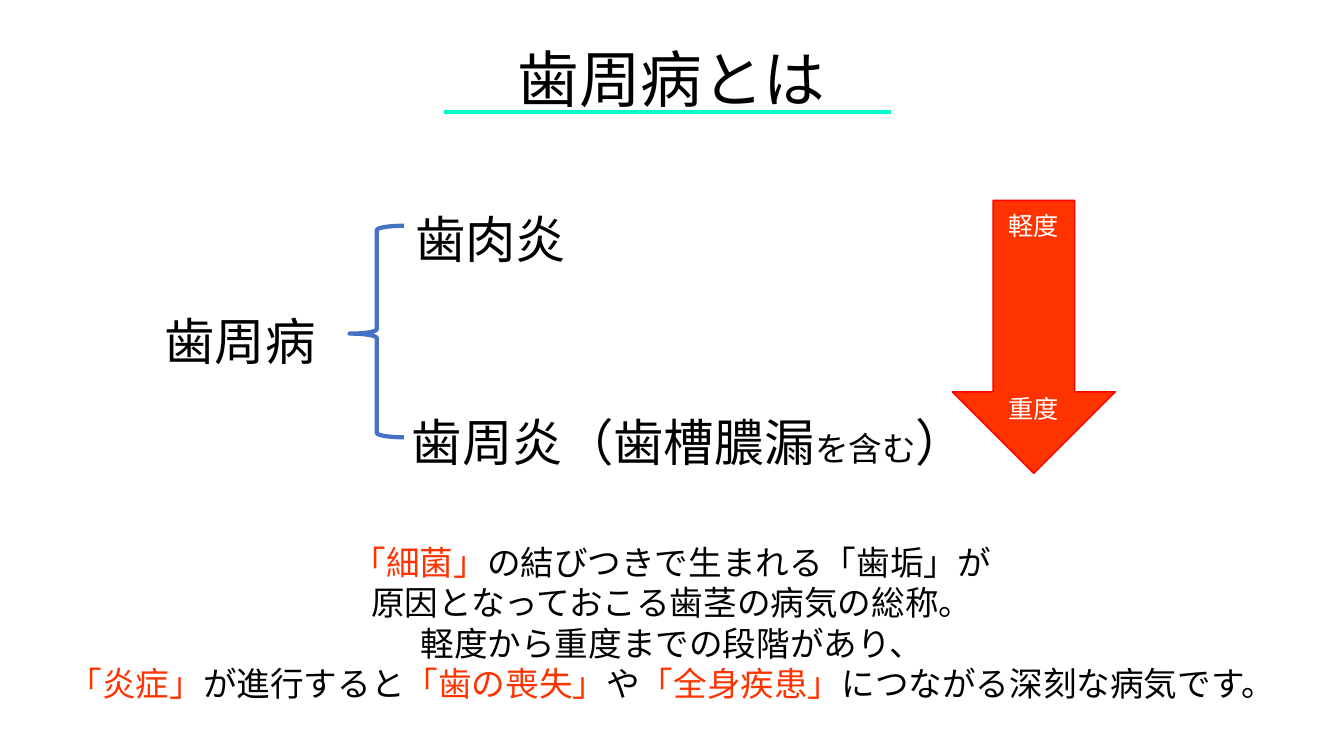
from lxml import etree
from pptx import Presentation
from pptx.dml.color import RGBColor
from pptx.enum.shapes import MSO_CONNECTOR, MSO_SHAPE
from pptx.enum.text import MSO_ANCHOR, PP_ALIGN
from pptx.oxml.ns import qn
from pptx.util import Cm, Pt

FONT = "Noto Sans CJK JP"
BLACK, WHITE, RED = "000000", "FFFFFF", "FF3300"


def rgb(value):
    return RGBColor.from_string(value)


def write(tf, lines, pitch, align=PP_ALIGN.LEFT, gap=0):
    """Fill a frame; each line is a list of (text, size, colour) runs."""
    tf.word_wrap = True
    for i, runs in enumerate(lines):
        p = tf.add_paragraph() if i else tf.paragraphs[0]
        p.alignment = align
        p.line_spacing = Pt(pitch)
        p.space_before = Pt(gap if i else 0)
        for text, size, colour in runs:
            r = p.add_run()
            r.text = text
            for name, value in {"name": FONT, "size": Pt(size)}.items():
                setattr(r.font, name, value)
            r.font.color.rgb = rgb(colour)
            ea = etree.SubElement(r.font._element, qn("a:ea"))
            ea.set("typeface", FONT)


prs = Presentation()
prs.slide_width, prs.slide_height = Cm(33.87), Cm(19.05)
s = prs.slides.add_slide(prs.slide_layouts[6])

# Title, labels and explanation
title = [[("歯周病とは", 44, BLACK)]]
disease = [[("歯周病", 36, BLACK)]]
gingivitis = [[("歯肉炎", 36, BLACK)]]
periodontitis = [[("歯周炎（歯槽膿漏", 36, BLACK), ("を含む", 24, BLACK), ("）", 36, BLACK)]]
explanation = [
    [("「細菌」", 24, RED), ("の結びつきで生まれる「歯垢」が", 24, BLACK)],
    [("原因となっておこる歯茎の病気の総称。", 24, BLACK)],
    [("軽度から重度までの段階があり、", 24, BLACK)],
    [("「炎症」", 24, RED), ("が進行すると", 24, BLACK), ("「歯の喪失」", 24, RED),
     ("や", 24, BLACK), ("「全身疾患」", 24, RED), ("につながる深刻な病気です。", 24, BLACK)],
]
for lines, box, pitch, align in [
    (title, (1.78, 0.94, 30.3, 1.78), 52, PP_ALIGN.CENTER),
    (disease, (3.89, 7.65, 4.37, 1.8), 44, PP_ALIGN.LEFT),
    (gingivitis, (10.21, 5.1, 4.37, 1.8), 44, PP_ALIGN.LEFT),
    (periodontitis, (10.13, 10.2, 15.47, 1.8), 44, PP_ALIGN.LEFT),
    (explanation, (1.37, 13.52, 31.12, 4.37), 28.9, PP_ALIGN.CENTER),
]:
    tb = s.shapes.add_textbox(*map(Cm, box))
    write(tb.text_frame, lines, pitch, align)

# Title underline
underline = s.shapes.add_connector(
    MSO_CONNECTOR.STRAIGHT, Cm(11.18), Cm(2.82), Cm(22.45), Cm(2.82))
underline.line.color.rgb = rgb("00FFCC")
underline.line.width = Pt(3)
etree.SubElement(underline._element.spPr, qn("a:effectLst"))

# Brace joining the two types
brace = s.shapes.add_shape(MSO_SHAPE.LEFT_BRACE, Cm(8.81), Cm(5.69), Cm(1.37), Cm(5.33))
brace.adjustments[0], brace.adjustments[1] = 0.08, 0.51
brace.shadow.inherit = False
brace.fill.background()
brace.line.color.rgb = rgb("4472C4")
brace.line.width = Pt(3)

# Severity arrow
arrow = s.shapes.add_shape(MSO_SHAPE.DOWN_ARROW, Cm(24), Cm(5.05), Cm(4.11), Cm(6.88))
arrow.shadow.inherit = False
arrow.fill.solid()
arrow.fill.fore_color.rgb = rgb(RED)
arrow.line.color.rgb = rgb("FF0000")
arrow.line.width = Pt(1)
arrow.text_frame.vertical_anchor = MSO_ANCHOR.MIDDLE
write(arrow.text_frame, [[("軽度", 18, WHITE)], [("重度", 18, WHITE)]],
      22, PP_ALIGN.CENTER, gap=109)

prs.save("out.pptx")
